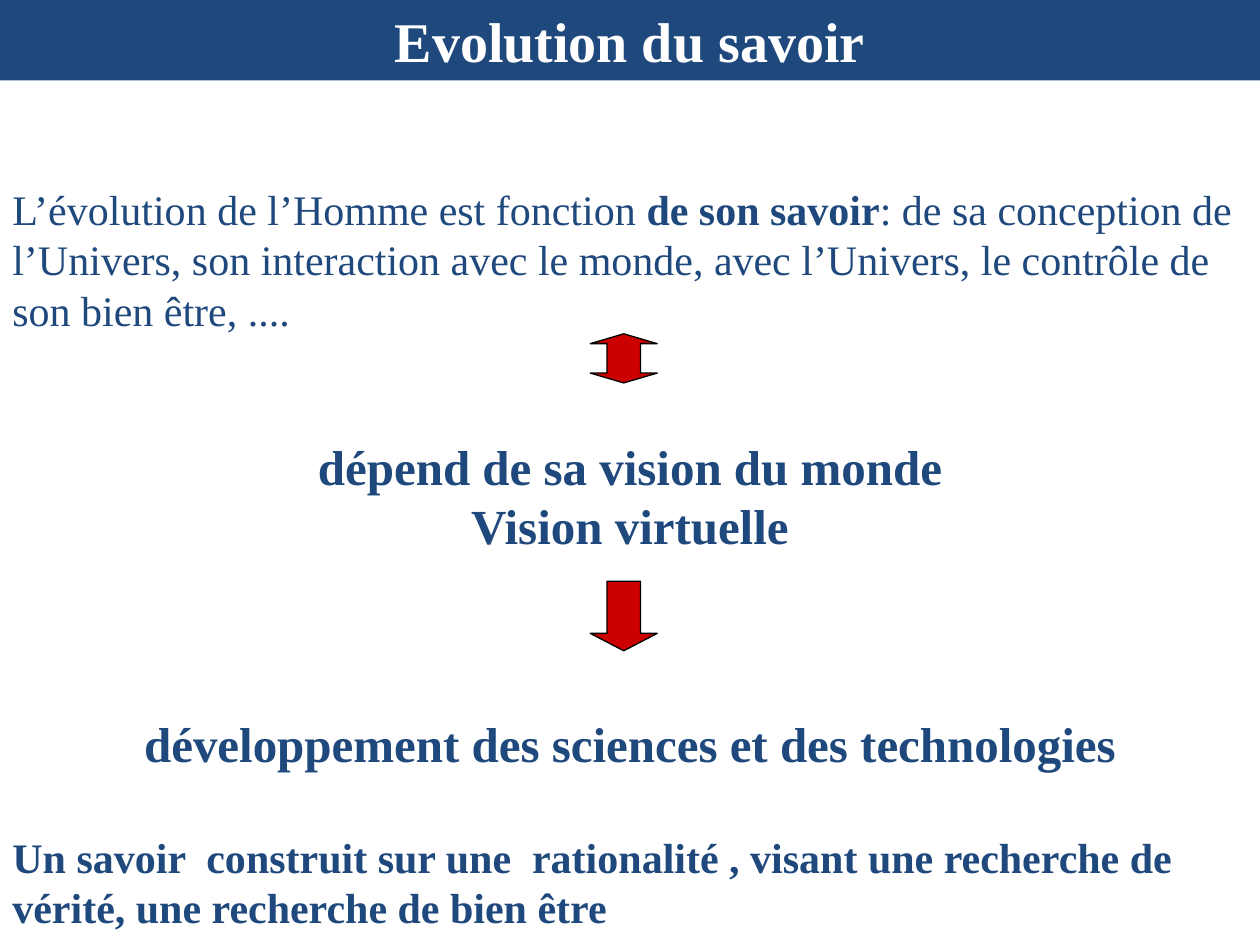
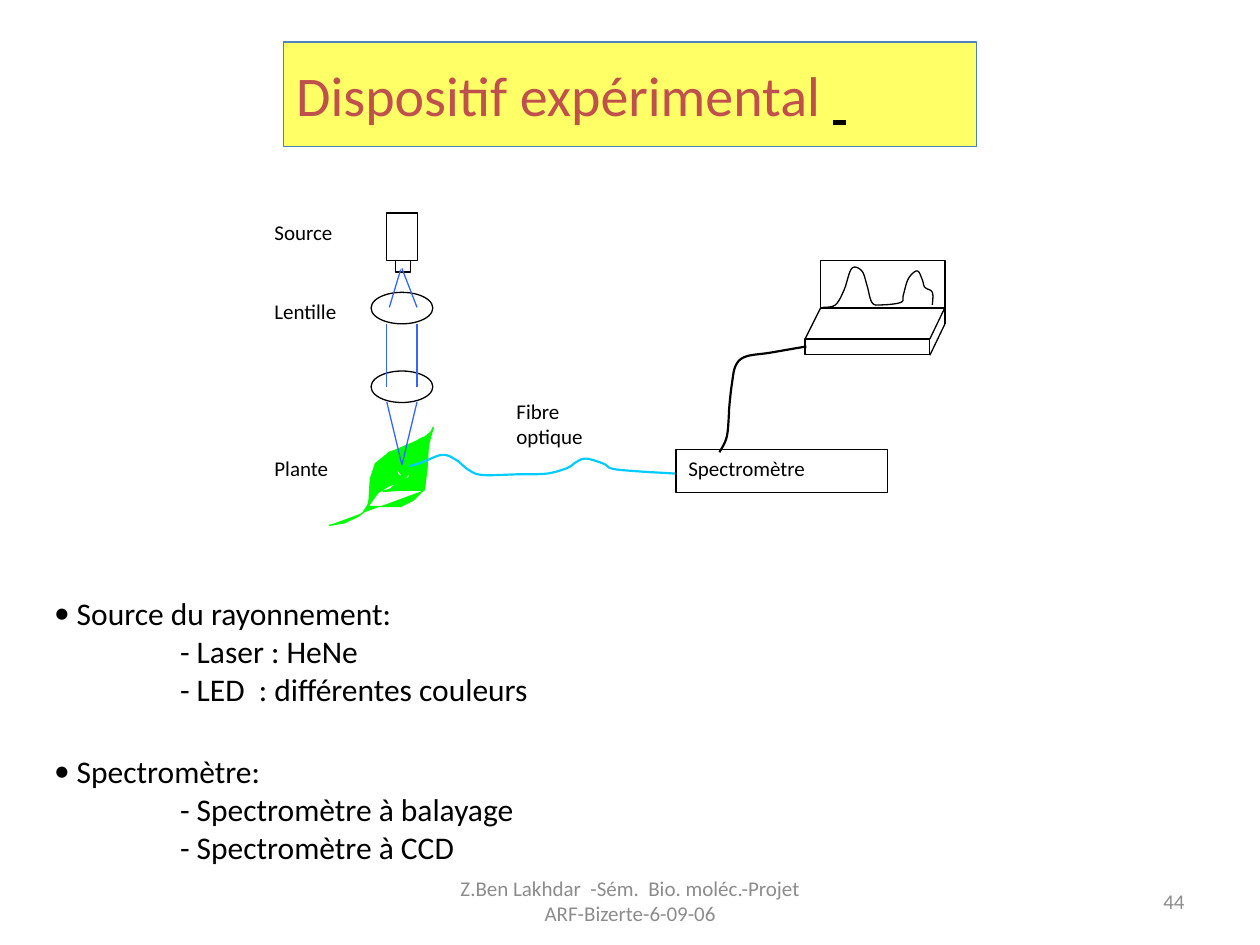
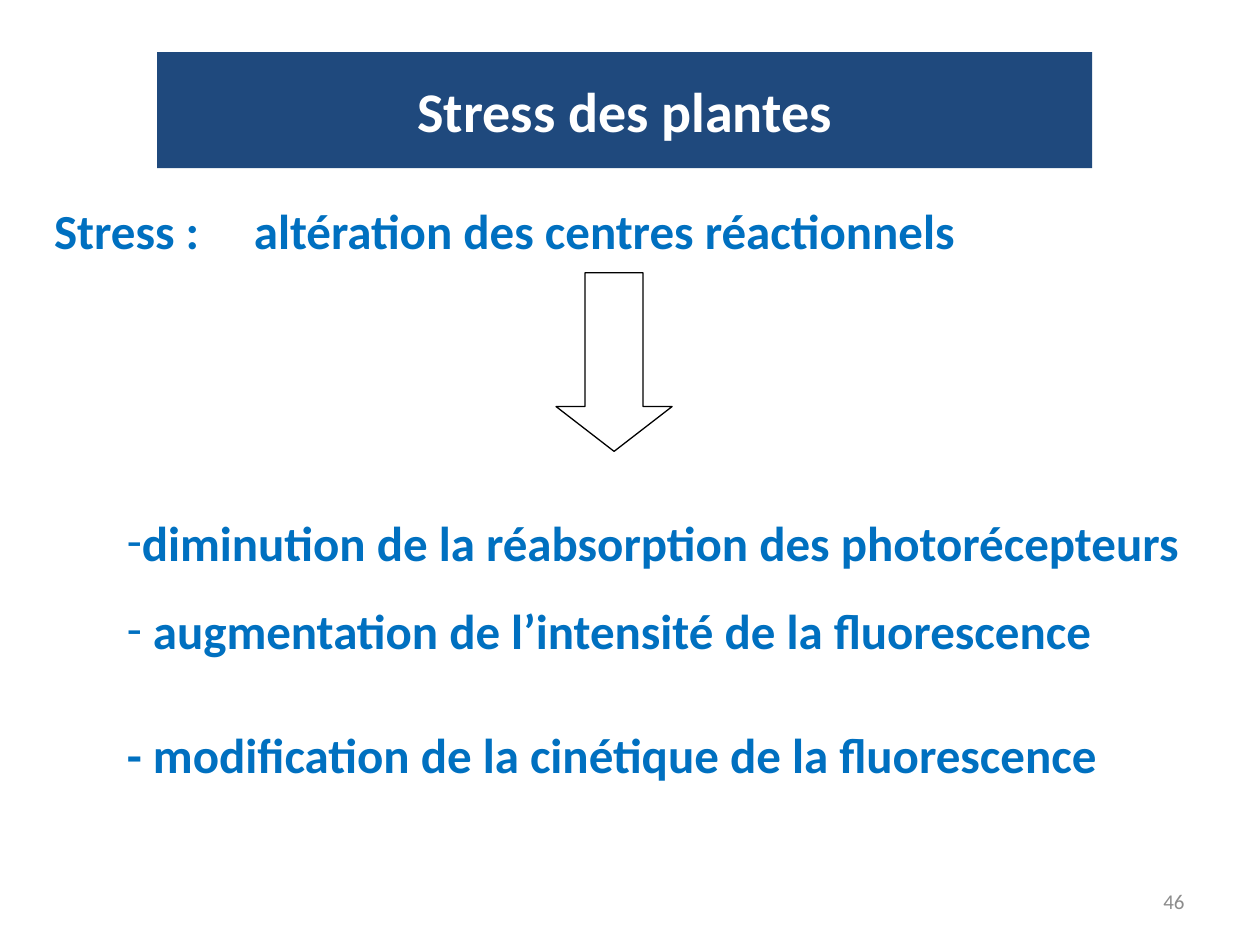
from dataclasses import dataclass
from lxml import etree
from pptx import Presentation
from pptx.dml.color import RGBColor
from pptx.enum.shapes import MSO_CONNECTOR, MSO_SHAPE
from pptx.enum.text import MSO_ANCHOR, PP_ALIGN
from pptx.oxml.ns import qn
from pptx.util import Cm, Pt

RECT, OVAL = MSO_SHAPE.RECTANGLE, MSO_SHAPE.OVAL
DOWN, UP_DOWN = MSO_SHAPE.DOWN_ARROW, MSO_SHAPE.UP_DOWN_ARROW
STRAIGHT = MSO_CONNECTOR.STRAIGHT
TOP, MIDDLE = MSO_ANCHOR.TOP, MSO_ANCHOR.MIDDLE
LEFT, CENTER, RIGHT = PP_ALIGN.LEFT, PP_ALIGN.CENTER, PP_ALIGN.RIGHT


@dataclass(frozen=True)
class Theme:
    navy: str = "1F497D"
    blue: str = "0070C0"
    red: str = "CC0000"
    brick: str = "C0504D"
    yellow: str = "FFFF66"
    border: str = "4F81BD"
    beam: str = "3366FF"
    fibre: str = "00CCFF"
    leaf: str = "00FF00"
    black: str = "000000"
    white: str = "FFFFFF"
    grey: str = "8C8C8C"
    sans: str = "Calibri"
    serif: str = "Times New Roman"
    title: int = 32
    large: int = 28
    body: int = 24
    item: int = 18
    small: int = 12
    thin: float = 0.75
    thick: float = 1.25


T = Theme()

KNOWLEDGE = [
    dict(runs=[("L’évolution de l’Homme est fonction ", {}),
               ("de son savoir", dict(bold=True)),
               (": de sa conception de l’Univers, son interaction avec le monde, avec "
                "l’Univers, le contrôle de son bien être, ....", {})]),
    dict(text="dépend de sa vision du monde", size=T.large, bold=True, align=CENTER, before=58),
    dict(text="Vision virtuelle", size=T.large, bold=True, align=CENTER),
    dict(text="développement des sciences et des technologies", size=T.large, bold=True,
         align=CENTER, before=91),
    dict(text="Un savoir  construit sur une  rationalité , visant une recherche de vérité, "
              "une recherche de bien être", bold=True, before=34),
]
KNOWLEDGE_ARROWS = [
    (DOWN, (11.9, 11.72, 1.35, 1.4), 26000),
    (UP_DOWN, (11.9, 6.73, 1.35, 0.99), 20000),
]

EQUIPMENT = [
    ((0.84, 11.43, 12.9, 3.38), " Source du rayonnement:",
     ["- Laser : HeNe", "- LED  : différentes couleurs"]),
    ((0.84, 14.82, 13.54, 2.97), " Spectromètre:",
     ["- Spectromètre à balayage", "- Spectromètre à CCD"]),
]
FOOTER = "Z.Ben Lakhdar  -Sém.  Bio. moléc.-Projet ARF-Bizerte-6-09-06"

STRESS = [
    dict(text="diminution de la réabsorption des photorécepteurs", bullet="-", spacing=1.5),
    dict(text=" augmentation de l’intensité de la fluorescence", bullet="-", spacing=1.5),
    dict(text="- modification de la cinétique de la fluorescence", spacing=2.1),
]

GRID = Cm(2.54) / 100
LENSES_AND_LAMP = [
    (OVAL, (294.5, 232, 49, 25)), (OVAL, (294.5, 294.5, 49, 25)),
    (RECT, (307, 169, 24.5, 37.5)), (RECT, (314, 207, 12, 9)),
]
BEAMS = [
    (318, 214, 309, 244), (319, 213, 331, 244),
    (307, 257, 307, 307), (331, 257, 331, 307),
    (307, 319, 319, 369), (331, 319, 319, 369),
]
LABELS = [("Source", 169), ("Lentille", 232), ("Plante", 357)]
COMPUTER_BOXES = [(651.5, 207, 98.5, 37.5), (639, 269, 98.5, 12.5)]
COMPUTER_EDGES = [
    (651.5, 244, 639, 269), (639, 269, 738, 269), (750, 244, 738, 269),
    (750, 244, 750, 257), (738, 282, 750, 257),
]
LEAF = [
    (261, 417), (273, 415), (284, 410), (288, 407), (292, 401), (293, 397), (294, 380),
    (298, 368), (303, 364), (309, 359), (312, 358), (324, 353), (331, 350), (334, 348),
    (337, 347), (342, 343), (344, 339), (342, 346), (340, 354), (339, 371), (337, 388),
    (328, 397), (318, 402), (292, 402), (300, 391), (308, 386), (320, 381), (322, 377),
    (325, 374), (326, 371), (332, 363), (337, 353), (338, 350), (343, 342), (339, 347),
    (331, 363), (330, 366), (326, 372), (325, 375), (323, 378), (319, 377), (312, 368),
    (310, 365), (308, 361), (315, 374), (316, 377), (324, 380), (328, 371), (329, 368),
    (332, 367), (335, 365), (332, 366), (329, 368), (323, 376), (319, 380), (310, 388),
    (304, 390), (320, 389), (337, 389),
]
OPTICAL_FIBRE = [
    (325, 370), (335, 367), (351, 361), (362, 365), (372, 373), (383, 377), (410, 376.5),
    (433, 376), (446, 373), (453, 370), (457, 367), (465, 364), (479, 368), (486, 372),
    (505, 374), (538, 376),
]
CABLE = [
    (640, 275), (611, 280), (592, 283), (584, 290), (581, 304), (579, 321),
    (577, 346), (571, 359),
]
SPECTRUM = [
    (653, 244), (663, 242), (670, 230), (676, 213), (684, 215), (688, 226), (692, 240),
    (699, 242), (715, 240), (717, 234), (721, 221), (728, 215), (732, 222), (734, 228),
    (740, 232), (740, 242),
]


def rgb(color):
    return RGBColor.from_string(color)


def cm(box):
    return [Cm(v) for v in box]


def grid(values):
    return [round(v * GRID) for v in values]


def paint(sp, fill=None, line=None, width=T.thin):
    sp.shadow.inherit = False
    if fill:
        sp.fill.solid()
        sp.fill.fore_color.rgb = rgb(fill)
    else:
        sp.fill.background()
    if line:
        sp.line.color.rgb = rgb(line)
        sp.line.width = Pt(width)
    else:
        sp.line.fill.background()
    return sp


def add_block(shapes, kind, box, fill=None, line=None):
    return paint(shapes.add_shape(kind, *box), fill, line)


def add_arrow(shapes, kind, box, head, fill=None):
    sp = add_block(shapes, kind, box, fill, T.black)
    guides = sp._element.spPr.find(qn("a:prstGeom")).find(qn("a:avLst"))
    for guide in list(guides):
        guides.remove(guide)
    for name, value in (("adj1", 50000), ("adj2", head)):
        etree.SubElement(guides, qn("a:gd"), name=name, fmla=f"val {value}")


def add_line(shapes, ends, color):
    c = shapes.add_connector(STRAIGHT, *grid(ends))
    c.line.color.rgb = rgb(color)
    c.line.width = Pt(T.thin)
    etree.SubElement(c._element.spPr, qn("a:effectLst"))


def smooth(points, steps):
    padded = [points[0], *points, points[-1]]
    curve = [points[0]]
    for a, b, c, d in zip(padded, padded[1:], padded[2:], padded[3:]):
        for i in range(1, steps + 1):
            t = i / steps
            curve.append(tuple(
                q + t * (r - p) / 2 + t ** 2 * (2 * p - 5 * q + 4 * r - s) / 2
                + t ** 3 * (3 * q - p - 3 * r + s) / 2
                for p, q, r, s in zip(a, b, c, d)))
    return curve


def add_curve(shapes, points, color, width=T.thin, fill=None, steps=6):
    start, *rest = [grid(p) for p in smooth(points, steps)]
    builder = shapes.build_freeform(*start)
    builder.add_line_segments(rest, close=False)
    paint(builder.convert_to_shape(), fill, color, width)


def write(sp, paragraphs, size, color, font=T.sans, anchor=MIDDLE, wrap=True, bold=False,
          align=LEFT):
    tf = sp.text_frame
    tf.word_wrap = wrap
    tf.vertical_anchor = anchor
    for i, spec in enumerate(paragraphs):
        p = tf.add_paragraph() if i else tf.paragraphs[0]
        p.alignment = spec.get("align", align)
        if "before" in spec:
            p.space_before = Pt(spec["before"])
        if "spacing" in spec:
            p.line_spacing = spec["spacing"]
        pPr = p._p.get_or_add_pPr()
        if "indent" in spec:
            pPr.set("marL", str(Cm(spec["indent"])))
        if "bullet" in spec:
            etree.SubElement(pPr, qn("a:buFont"), typeface=font)
            etree.SubElement(pPr, qn("a:buChar"), char=spec["bullet"])
        if "tab" in spec:
            tabs = etree.SubElement(pPr, qn("a:tabLst"))
            etree.SubElement(tabs, qn("a:tab"), pos=str(Cm(spec["tab"])), algn="l")
        for text, style in spec.get("runs") or [(spec["text"], {})]:
            r = p.add_run()
            r.text = text
            r.font.name = font
            r.font.size = Pt(spec.get("size", size))
            r.font.bold = style.get("bold", spec.get("bold", bold))
            r.font.underline = style.get("underline")
            r.font.color.rgb = rgb(style.get("color", color))
    return tf


def add_text(shapes, box, paragraphs, size, color, **style):
    return write(shapes.add_textbox(*box), paragraphs, size, color, **style)


def add_title(slide, box, text, **style):
    sp = add_block(slide.shapes, RECT, cm(box), T.navy)
    write(sp, [dict(text=text)], T.title, T.white, bold=True, align=CENTER, **style)


def add_number(slide, number):
    add_text(slide.shapes, cm((18.21, 17.65, 5.92, 1.02)), [dict(text=number)],
             T.small, T.grey, align=RIGHT)


def knowledge_slide(slide):
    sp = add_block(slide.shapes, RECT, cm((0, 2.54, 25.4, 16.51)), T.white)
    tf = write(sp, KNOWLEDGE, T.body, T.navy, font=T.serif, anchor=TOP)
    tf.margin_top = Cm(1.16)
    for kind, box, head in KNOWLEDGE_ARROWS:
        add_arrow(slide.shapes, kind, cm(box), head, T.red)
    add_title(slide, (0, 0, 25.4, 1.62), "Evolution du savoir", font=T.serif, anchor=TOP)


def draw_setup(shapes):
    for kind, box in LENSES_AND_LAMP:
        add_block(shapes, kind, grid(box), T.white, T.black)
    add_curve(shapes, LEAF, T.leaf, fill=T.leaf, steps=1)
    for ends in BEAMS:
        add_line(shapes, ends, T.beam)
    for text, top in LABELS:
        sp = add_block(shapes, RECT, grid((208, top, 74, 37)), T.white)
        write(sp, [dict(text=text)], T.small, T.black, anchor=TOP)
    add_curve(shapes, OPTICAL_FIBRE, T.fibre, T.thick)
    sp = add_block(shapes, RECT, grid((536.5, 357, 168, 34)), T.white, T.black)
    write(sp, [dict(text="Spectromètre")], T.small, T.black, anchor=TOP)
    for box in COMPUTER_BOXES:
        add_block(shapes, RECT, grid(box), T.white, T.black)
    for ends in COMPUTER_EDGES:
        add_line(shapes, ends, T.black)
    add_curve(shapes, CABLE, T.black, T.thick)
    add_text(shapes, grid((400, 303, 125, 67)), [dict(text="Fibre"), dict(text="optique")],
             T.small, T.black, wrap=False)
    add_curve(shapes, SPECTRUM, T.black)


def setup_slide(slide):
    add_text(slide.shapes, cm((8.68, 17.65, 8.05, 1.02)), [dict(text=FOOTER)],
             T.small, T.grey, align=CENTER)
    add_number(slide, "44")
    sp = add_block(slide.shapes, RECT, cm((5.72, 0.85, 13.97, 2.11)), T.yellow, T.border)
    title = [("Dispositif expérimental ", {}), (" ", dict(color=T.black, underline=True))]
    write(sp, [dict(runs=title)], T.title, T.brick, wrap=False)
    for box, heading, items in EQUIPMENT:
        lines = [dict(text=heading, bullet="•")]
        lines += [dict(text=item, indent=2.54) for item in items]
        add_text(slide.shapes, cm(box), lines, T.item, T.black)
    draw_setup(slide.shapes.add_group_shape().shapes)


def stress_slide(slide):
    add_number(slide, "46")
    add_title(slide, (3.17, 1.05, 18.85, 2.34), "Stress des plantes", wrap=False)
    cause = dict(text="Stress :\taltération des centres réactionnels", spacing=1.5, tab=4.03)
    add_text(slide.shapes, cm((0.84, 3.16, 23.7, 2.34)), [cause], T.large, T.blue,
             bold=True, wrap=False)
    tf = add_text(slide.shapes, cm((2.31, 9.12, 21.9, 8.05)), STRESS, T.large, T.blue,
                  bold=True)
    tf.margin_bottom = Cm(0.9)
    add_arrow(slide.shapes, DOWN, cm((11.21, 5.5, 2.34, 3.6)), 38600)


def main():
    prs = Presentation()
    prs.slide_width, prs.slide_height = Cm(25.4), Cm(19.05)
    for build in (knowledge_slide, setup_slide, stress_slide):
        build(prs.slides.add_slide(prs.slide_layouts[6]))
    prs.save("out.pptx")


if __name__ == "__main__":
    main()
